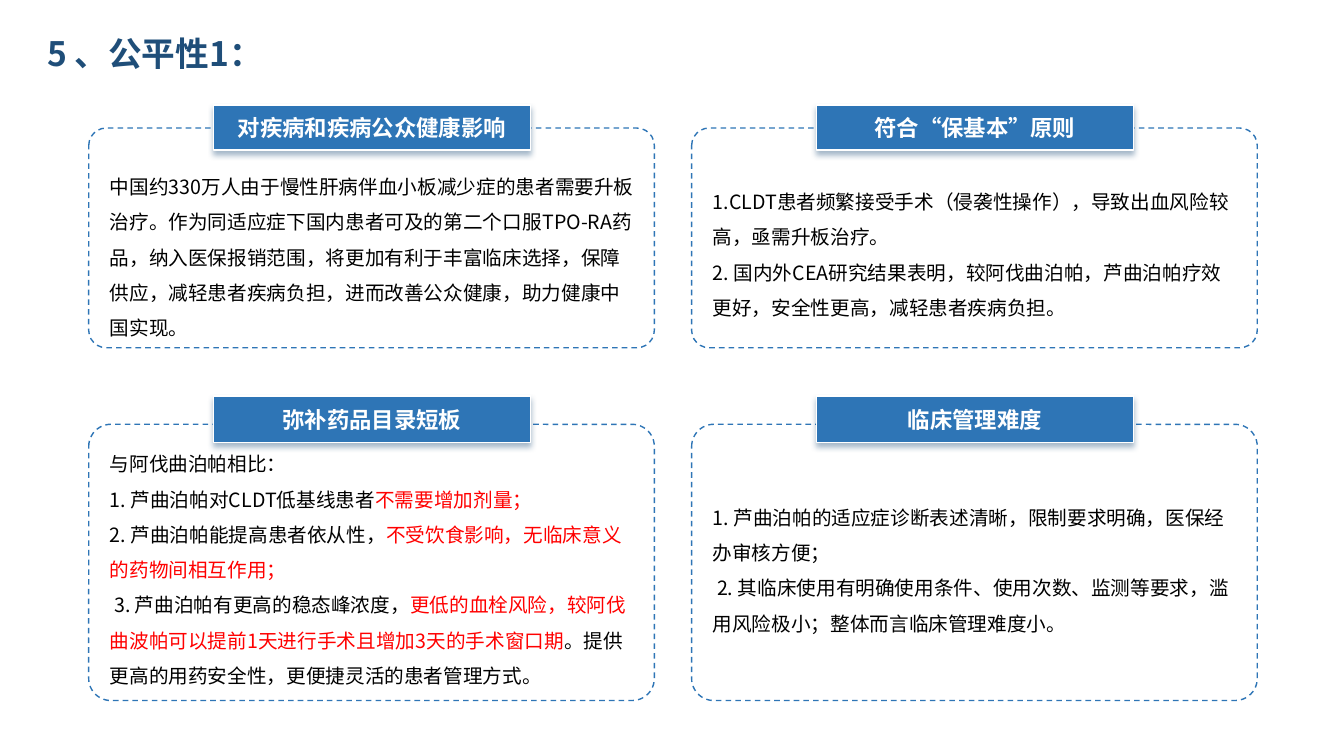
from lxml.etree import SubElement
from pptx import Presentation
from pptx.dml.color import RGBColor
from pptx.enum.dml import MSO_LINE_DASH_STYLE as Dash
from pptx.enum.shapes import MSO_SHAPE as Shape
from pptx.enum.text import MSO_ANCHOR as Anchor
from pptx.enum.text import MSO_AUTO_SIZE as Fit
from pptx.enum.text import PP_ALIGN as Align
from pptx.oxml.ns import qn
from pptx.util import Pt

PX = 9144  # 100 px to the inch
FONT = "Noto Sans CJK SC"
NAVY = RGBColor(0x1F, 0x4E, 0x79)
BLUE = RGBColor(0x2E, 0x75, 0xB6)
WHITE = RGBColor(0xFF, 0xFF, 0xFF)
BLACK = RGBColor(0, 0, 0)
RED = RGBColor(0xFF, 0, 0)

COLS = (88, 686)
# frame top, frame height, tab top, tab height
ROWS = ((127, 218, 104, 45), (421, 274, 393, 46))

# column, row, heading, text top, text height, paragraphs;
# within a paragraph, every second run is red
CARDS = (
    (0, 0, "对疾病和疾病公众健康影响", 157, 183, (
        ("中国约330万人由于慢性肝病伴血小板减少症的患者需要升板治疗。"
         "作为同适应症下国内患者可及的第二个口服TPO-RA药品，纳入医保报销范围，"
         "将更加有利于丰富临床选择，保障供应，减轻患者疾病负担，"
         "进而改善公众健康，助力健康中国实现。",),
    )),
    (0, 1, "弥补药品目录短板", 432, 254, (
        ("与阿伐曲泊帕相比：",),
        ("1. 芦曲泊帕对CLDT低基线患者", "不需要增加剂量；"),
        ("2. 芦曲泊帕能提高患者依从性，",
         "不受饮食影响，无临床意义的药物间相互作用；"),
        (" 3. 芦曲泊帕有更高的稳态峰浓度，",
         "更低的血栓风险，较阿伐曲波帕可以提前1天进行手术且增加3天的手术窗口期",
         "。提供更高的用药安全性，更便捷灵活的患者管理方式。"),
    )),
    (1, 0, "符合“保基本”原则", 172, 148, (
        ("1.CLDT患者频繁接受手术（侵袭性操作），导致出血风险较高，亟需升板治疗。",),
        ("2. 国内外CEA研究结果表明，较阿伐曲泊帕，芦曲泊帕疗效更好，"
         "安全性更高，减轻患者疾病负担。",),
    )),
    (1, 1, "临床管理难度", 485, 148, (
        ("1. 芦曲泊帕的适应症诊断表述清晰，限制要求明确，医保经办审核方便；",),
        (" 2. 其临床使用有明确使用条件、使用次数、监测等要求，"
         "滥用风险极小；整体而言临床管理难度小。",),
    )),
)


def scale(*box):
    return [n * PX for n in box]


def add_run(para, text, size, color, bold=False):
    run = para.add_run()
    run.text = text
    font = run.font
    font.size, font.bold, font.name = Pt(size), bold, FONT
    font.color.rgb = color
    ea = SubElement(run._r.get_or_add_rPr(), qn("a:ea"))
    ea.set("typeface", FONT)


def add_title(slide, text):
    frame = slide.shapes.add_textbox(*scale(37, -3, 1268, 111)).text_frame
    frame.word_wrap = True
    frame.vertical_anchor = Anchor.MIDDLE
    add_run(frame.paragraphs[0], text, 24, NAVY, True)


def add_body(slide, box, paras):
    frame = slide.shapes.add_textbox(*scale(*box)).text_frame
    frame.word_wrap = True
    frame.auto_size = Fit.SHAPE_TO_FIT_TEXT
    for i, runs in enumerate(paras):
        para = frame.add_paragraph() if i else frame.paragraphs[0]
        para.line_spacing = 1.5
        for j, text in enumerate(runs):
            add_run(para, text, 14, RED if j % 2 else BLACK)


def add_frame(slide, box):
    """Add the dashed round outline of a card."""
    shape = slide.shapes.add_shape(Shape.ROUNDED_RECTANGLE, *scale(*box))
    shape.adjustments[0] = 0.08
    shape.shadow.inherit = False
    shape.fill.background()
    shape.line.color.rgb = BLUE
    shape.line.width = Pt(1)
    shape.line.dash_style = Dash.DASH


def cast_shade(shape):
    """Give the shape a soft shadow straight below it."""
    shape.shadow.inherit = False
    effects = shape._element.spPr.find(qn("a:effectLst"))
    shade = SubElement(effects, qn("a:outerShdw"), blurRad=str(Pt(4)),
                       dist=str(Pt(3)), dir="5400000", algn="t",
                       rotWithShape="0")
    color = SubElement(shade, qn("a:srgbClr"), val=str(NAVY))
    SubElement(color, qn("a:alpha"), val="40000")


def add_tab(slide, box, text):
    """Add the heading that sits on a card's top edge."""
    shape = slide.shapes.add_shape(Shape.RECTANGLE, *scale(*box))
    cast_shade(shape)
    shape.fill.solid()
    shape.fill.fore_color.rgb = BLUE
    shape.line.color.rgb = WHITE
    shape.line.width = Pt(1)
    frame = shape.text_frame
    frame.vertical_anchor = Anchor.MIDDLE
    para = frame.paragraphs[0]
    para.alignment = Align.CENTER
    add_run(para, text, 16, WHITE, True)


def add_card(slide, col, row, head, top, height, paras):
    left = COLS[col]
    frame_top, frame_height, tab_top, tab_height = ROWS[row]
    add_body(slide, (left + 11, top, 541, height), paras)
    add_frame(slide, (left, frame_top, 561, frame_height))
    add_tab(slide, (left + 124, tab_top, 314, tab_height), head)


def main():
    deck = Presentation()
    deck.slide_width, deck.slide_height = scale(1333, 750)
    slide = deck.slides.add_slide(deck.slide_layouts[6])
    add_title(slide, "5 、公平性1：")
    for card in CARDS:
        add_card(slide, *card)
    deck.save("out.pptx")


if __name__ == "__main__":
    main()
